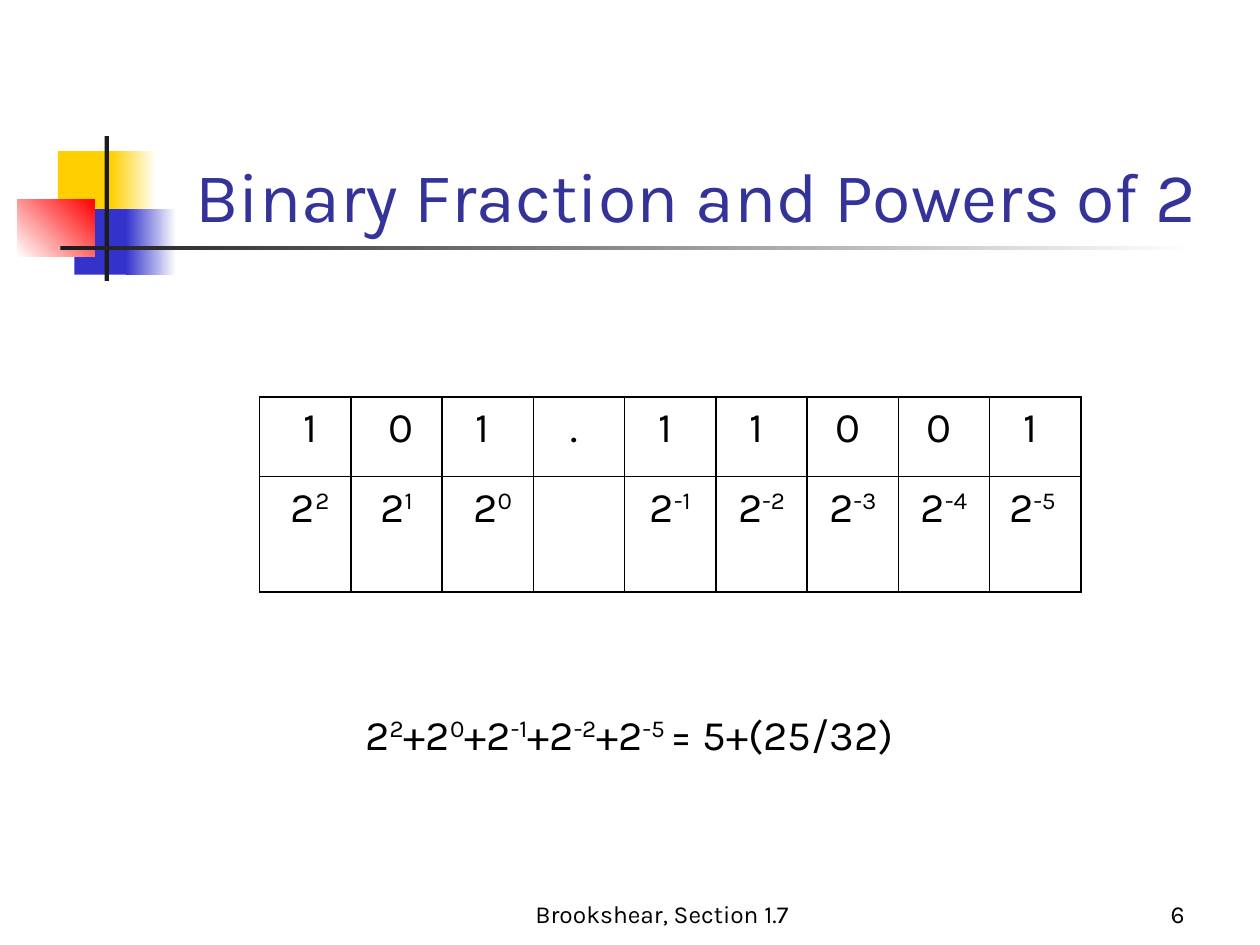
import pptx
import pptx.util
import pptx.dml.color
import pptx.enum.shapes
import pptx.enum.text
import pptx.oxml

WIDE, HIGH = pptx.util.Inches(10), pptx.util.Inches(7.5)
COLS, ROWS = 100, 75  # layout grid over the whole slide

HUES = {
    "gold": "FFCF01", "blue": "3333CC", "red": "FF0000", "dark": "1C1C1C",
    "white": "FFFFFF", "title": "333399", "text": "000000",
}
ALIGN = pptx.enum.text.PP_ALIGN
ANCHOR = pptx.enum.text.MSO_ANCHOR
BASE = {"name": "Karla", "size": pptx.util.Pt(24)}

# fill colours, place on the grid, gradient angle
DECOR = [
    (["gold"], (4.6, 12, 4.8, 5.2), 0),
    (["gold", "white"], (8.8, 12, 3.6, 5.2), 0),
    (["blue"], (5.9, 16.6, 4.6, 5.2), 0),
    (["blue", "white"], (10, 16.6, 4, 5.2), 0),
    (["white", "red"], (1.4, 15.8, 6.1, 4.6), 45),
    (["dark"], (8.3, 10.8, 0.35, 11.5), 0),
    (["dark", "white"], (4.8, 19.5, 90, 0.35), 0),
]
# ^ switches superscript on and off, ~ is a no-break space
DIGITS = ["~1", "~0", "1~", ".~", "1~", "1~", "0~", "0~", "1~"]
POWERS = ["~2^2", "2^1", "~2^0", "", "2^-1", "2^-2", "2^-3", "2^-4", "2^-5~"]
SUM = "2^2^+2^0^+2^-1^+2^-2^+2^-5 ^= 5+(25/32)"


def grid(left, top, width, height):
    """Turn grid columns and rows into slide lengths."""
    col, row = WIDE / COLS, HIGH / ROWS
    return [round(n) for n in (left * col, top * row, width * col, height * row)]


def color(name):
    return pptx.dml.color.RGBColor.from_string(HUES[name])


def apply(item, vals):
    for key, val in vals.items():
        setattr(item, key, val)


def write(para, text, hue="text", **font):
    """Fill a paragraph, raising the parts between ^ marks."""
    for num, part in enumerate(text.replace("~", chr(160)).split("^")):
        if not part:
            continue
        run = para.add_run()
        run.text = part
        apply(run.font, {**BASE, **font})
        run.font.color.rgb = color(hue)
        if num % 2:
            run.font._element.set("baseline", "30000")


def block(slide, hues, place, angle):
    kind = pptx.enum.shapes.MSO_SHAPE.RECTANGLE
    shape = slide.shapes.add_shape(kind, *grid(*place))
    shape.shadow.inherit = False
    shape.line.fill.background()
    if len(hues) == 1:
        shape.fill.solid()
        shape.fill.fore_color.rgb = color(hues[0])
        return
    shape.fill.gradient()
    shape.fill.gradient_angle = angle
    for stop, hue in zip(shape.fill.gradient_stops, hues):
        stop.color.rgb = color(hue)


def label(slide, text, place, align, anchor, hue="text", size=24):
    frame = slide.shapes.add_textbox(*grid(*place)).text_frame
    apply(frame, {"word_wrap": True, "vertical_anchor": anchor})
    para = frame.paragraphs[0]
    para.alignment = align
    write(para, text, hue, size=pptx.util.Pt(size))


def border(cell):
    """Draw a one-point line on each side of a cell."""
    props = cell._tc.get_or_add_tcPr()
    space = "http://schemas.openxmlformats.org/drawingml/2006/main"
    for num, side in enumerate("LRTB"):
        props.insert(num, pptx.oxml.parse_xml(
            f'<a:ln{side} xmlns:a="{space}" w="12700"><a:solidFill>'
            f'<a:srgbClr val="{HUES["text"]}"/></a:solidFill></a:ln{side}>'))


def table(slide, rows, place, heights):
    shape = slide.shapes.add_table(len(rows), len(rows[0]), *grid(*place))
    body = shape.table
    apply(body, {"first_row": False, "horz_banding": False})
    side = pptx.util.Inches(0.07)
    pads = {"margin_left": side, "margin_right": side,
            "margin_top": 0, "margin_bottom": 0}
    for row, high, texts in zip(body.rows, heights, rows):
        row.height = grid(0, 0, 0, high)[3]
        for cell, text in zip(row.cells, texts):
            apply(cell, pads)
            cell.fill.background()
            border(cell)
            para = cell.text_frame.paragraphs[0]
            apply(para, {"alignment": ALIGN.CENTER, "line_spacing": 1.15})
            write(para, text)


def main():
    deck = pptx.Presentation()
    apply(deck, {"slide_width": WIDE, "slide_height": HIGH})
    slide = deck.slides.add_slide(deck.slide_layouts[6])
    for hues, place, angle in DECOR:
        block(slide, hues, place, angle)
    label(slide, "Brookshear, Section 1.7", (36.7, 69.2, 31.7, 5),
          ALIGN.CENTER, ANCHOR.BOTTOM, size=14)
    label(slide, "6", (74.2, 69.2, 20.8, 5), ALIGN.RIGHT, ANCHOR.BOTTOM, size=14)
    label(slide, "Binary Fraction and Powers of 2", (12.6, 6.8, 85.2, 12.5),
          ALIGN.CENTER, ANCHOR.BOTTOM, "title", 40)
    table(slide, [DIGITS, POWERS], (20.6, 31.5, 65.2, 15.5), (6.3, 9.2))
    label(slide, SUM, (28, 55.7, 53.5, 5.1), ALIGN.LEFT, ANCHOR.TOP)
    deck.save("out.pptx")


if __name__ == "__main__":
    main()
